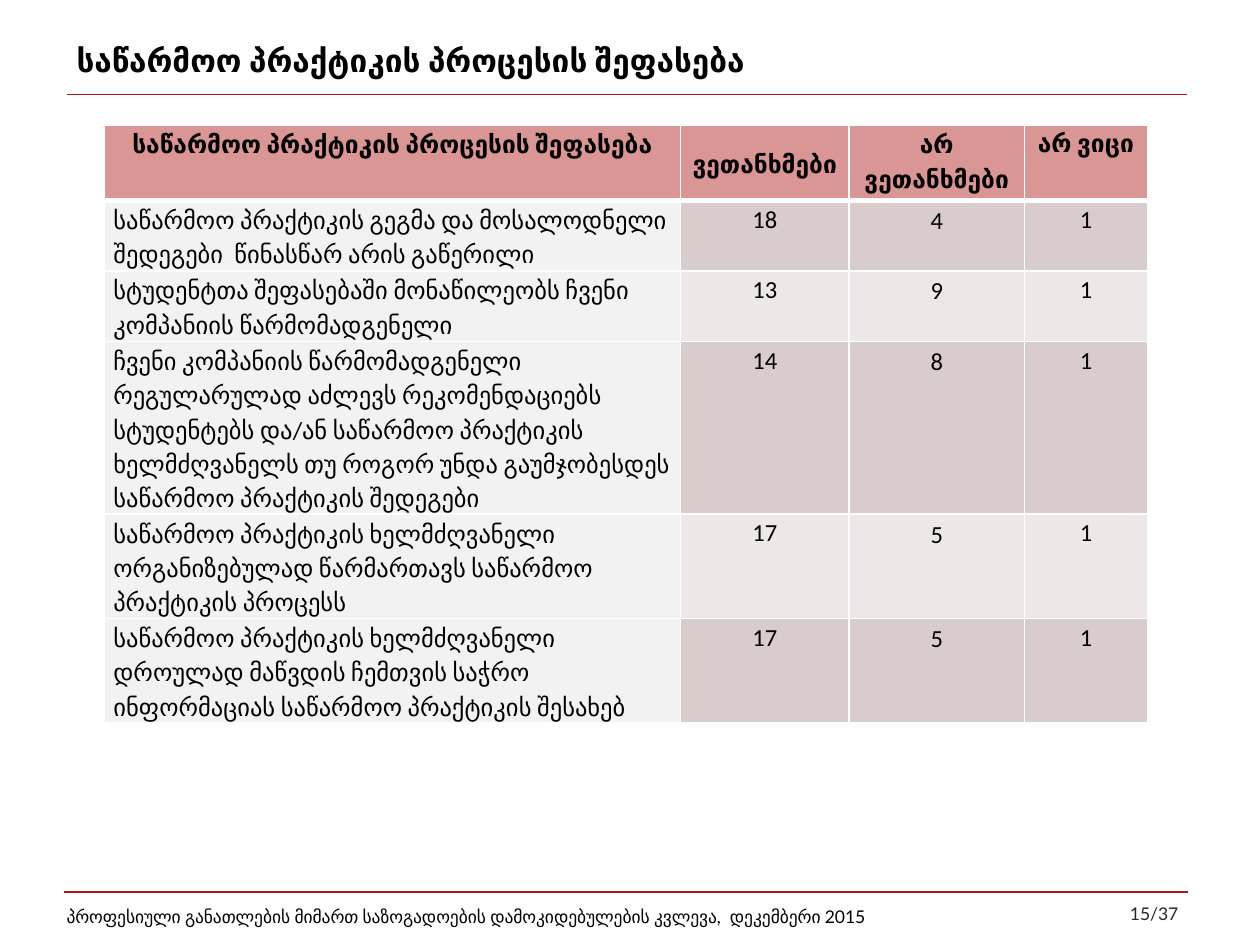
from pptx import Presentation
from pptx.dml.color import RGBColor
from pptx.enum.shapes import MSO_CONNECTOR
from pptx.enum.text import MSO_ANCHOR, PP_ALIGN
from pptx.oxml import parse_xml
from pptx.oxml.ns import nsdecls, qn
from pptx.util import Inches, Pt

WIDTH, HEIGHT = 10, 7.5
LINE_HEIGHT = 0.27
HEADER_PADDING, ROW_PADDING = 0.06, 0.02
COLUMN_WIDTHS = (4.57, 1.34, 1.39, 0.98)
SIDE_INSETS = (0.07, 0, 0.01, 0)
TOP_INSETS = (0.01, 0, 0.01, 0)

HEADER = ("საწარმოო პრაქტიკის პროცესის შეფასება", "ვეთანხმები", "არ ვეთანხმები", "არ ვიცი")
# Each row: text lines it takes up, then the cell values
ROWS = (
    (2, "საწარმოო პრაქტიკის გეგმა და მოსალოდნელი შედეგები  წინასწარ არის გაწერილი", 18, 4, 1),
    (2, "სტუდენტთა შეფასებაში მონაწილეობს ჩვენი კომპანიის წარმომადგენელი", 13, 9, 1),
    (5, "ჩვენი კომპანიის წარმომადგენელი რეგულარულად აძლევს რეკომენდაციებს სტუდენტებს "
        "და/ან საწარმოო პრაქტიკის ხელმძღვანელს თუ როგორ უნდა გაუმჯობესდეს საწარმოო "
        "პრაქტიკის შედეგები", 14, 8, 1),
    (3, "საწარმოო პრაქტიკის ხელმძღვანელი ორგანიზებულად წარმართავს საწარმოო პრაქტიკის "
        "პროცესს", 17, 5, 1),
    (3, "საწარმოო პრაქტიკის ხელმძღვანელი დროულად მაწვდის ჩემთვის საჭრო ინფორმაციას "
        "საწარმოო პრაქტიკის შესახებ", 17, 5, 1),
)


def color(hex_string):
    return RGBColor.from_string(hex_string)


class SlideBuilder:
    """Holds the style and the current slide; lengths are percentages of the slide's size."""

    rule_color = "AC161B"
    header_fill, label_fill = "D99694", "F2F2F2"
    band_fills = ("D8CCCC", "EDE7E7")
    text_font, table_font = "Lato", "Calibri"

    def __init__(self, presentation):
        self.presentation = presentation
        self.slide = presentation.slides.add_slide(presentation.slide_layouts[6])

    def across(self, percent):
        return round(self.presentation.slide_width * percent / 100)

    def down(self, percent):
        return round(self.presentation.slide_height * percent / 100)

    def format_text(self, paragraph, font_name, size, hex_string="000000", bold=False):
        for run in paragraph.runs:
            run.font.name = font_name
            run.font.size = Pt(size)
            run.font.bold = bold
            run.font.color.rgb = color(hex_string)

    def rule(self, left, right, top):
        line = self.slide.shapes.add_connector(
            MSO_CONNECTOR.STRAIGHT, self.across(left), self.down(top),
            self.across(right), self.down(top))
        line.line.color.rgb = color(self.rule_color)
        line.line.width = Pt(0.75)
        line._element.spPr.append(parse_xml(f"<a:effectLst {nsdecls('a')}/>"))

    def text(self, left, top, width, height, content, size,
             hex_string="000000", bold=False, align=PP_ALIGN.LEFT):
        box = self.slide.shapes.add_textbox(
            self.across(left), self.down(top), self.across(width), self.down(height))
        frame = box.text_frame
        frame.word_wrap = True
        frame.vertical_anchor = MSO_ANCHOR.MIDDLE
        frame.text = content
        frame.paragraphs[0].alignment = align
        self.format_text(frame.paragraphs[0], self.text_font, size, hex_string, bold)

    def borders(self, cell, top=1, bottom=1):
        properties = cell._tc.get_or_add_tcPr()
        widths = {"L": 1, "R": 1, "T": top, "B": bottom}
        for position, (side, width) in enumerate(widths.items()):
            properties.insert(position, parse_xml(
                f'<a:ln{side} {nsdecls("a")} w="{Pt(width)}"><a:solidFill>'
                f'<a:srgbClr val="FFFFFF"/></a:solidFill></a:ln{side}>'))

    def cell(self, cell, row, column, content):
        is_header, is_label = row == 0, column == 0
        cell.text_frame.text = str(content)
        cell.margin_left = cell.margin_right = Inches(SIDE_INSETS[column])
        cell.margin_top, cell.margin_bottom = Inches(TOP_INSETS[column]), 0
        if is_header and column == 1:
            cell.vertical_anchor = MSO_ANCHOR.MIDDLE
        paragraph = cell.text_frame.paragraphs[0]
        paragraph.line_spacing = 1.15
        paragraph.alignment = PP_ALIGN.CENTER if is_header or not is_label else PP_ALIGN.LEFT
        if not is_header and not is_label:
            paragraph.space_after = Pt(10)
        self.format_text(paragraph, self.table_font, 14, bold=is_header)
        fill = self.label_fill if is_label else self.band_fills[(row - 1) % 2]
        cell.fill.solid()
        cell.fill.fore_color.rgb = color(self.header_fill if is_header else fill)
        self.borders(cell, top=3 if row == 1 else 1, bottom=3 if is_header else 1)

    def table(self, left, top, header, rows):
        all_rows = ((2, *header), *rows)
        heights = [lines * LINE_HEIGHT + (ROW_PADDING if row else HEADER_PADDING)
                   for row, (lines, *_) in enumerate(all_rows)]
        table = self.slide.shapes.add_table(
            len(all_rows), len(header), self.across(left), self.down(top),
            Inches(sum(COLUMN_WIDTHS)), Inches(sum(heights))).table
        for column, width in zip(table.columns, COLUMN_WIDTHS):
            column.width = Inches(width)
        for row, (_, *values) in enumerate(all_rows):
            table.rows[row].height = Inches(heights[row])
            for column, value in enumerate(values):
                self.cell(table.cell(row, column), row, column, value)
        # No table style: every fill and border is set on the cells
        table._tbl.tblPr.find(qn("a:tableStyleId")).text = "{2D5ABB26-0587-4C30-8999-92F81FD0307C}"


def main():
    presentation = Presentation()
    presentation.slide_width, presentation.slide_height = Inches(WIDTH), Inches(HEIGHT)
    builder = SlideBuilder(presentation)
    builder.rule(5.3, 94.2, 10)
    builder.rule(5.1, 94.3, 94.4)
    builder.text(5.1, 2.8, 90, 7, "საწარმოო პრაქტიკის პროცესის შეფასება", 18, bold=True)
    builder.table(8.3, 13.2, HEADER, ROWS)
    builder.text(4.3, 94.3, 70, 5.3,
                 "პროფესიული განათლების მიმართ საზოგადოების დამოკიდებულების კვლევა,  "
                 "დეკემბერი 2015", 10)
    builder.text(79.2, 93.9, 15.3, 5.6, "15/37", 10, "262626", align=PP_ALIGN.RIGHT)
    presentation.save("out.pptx")


if __name__ == "__main__":
    main()
